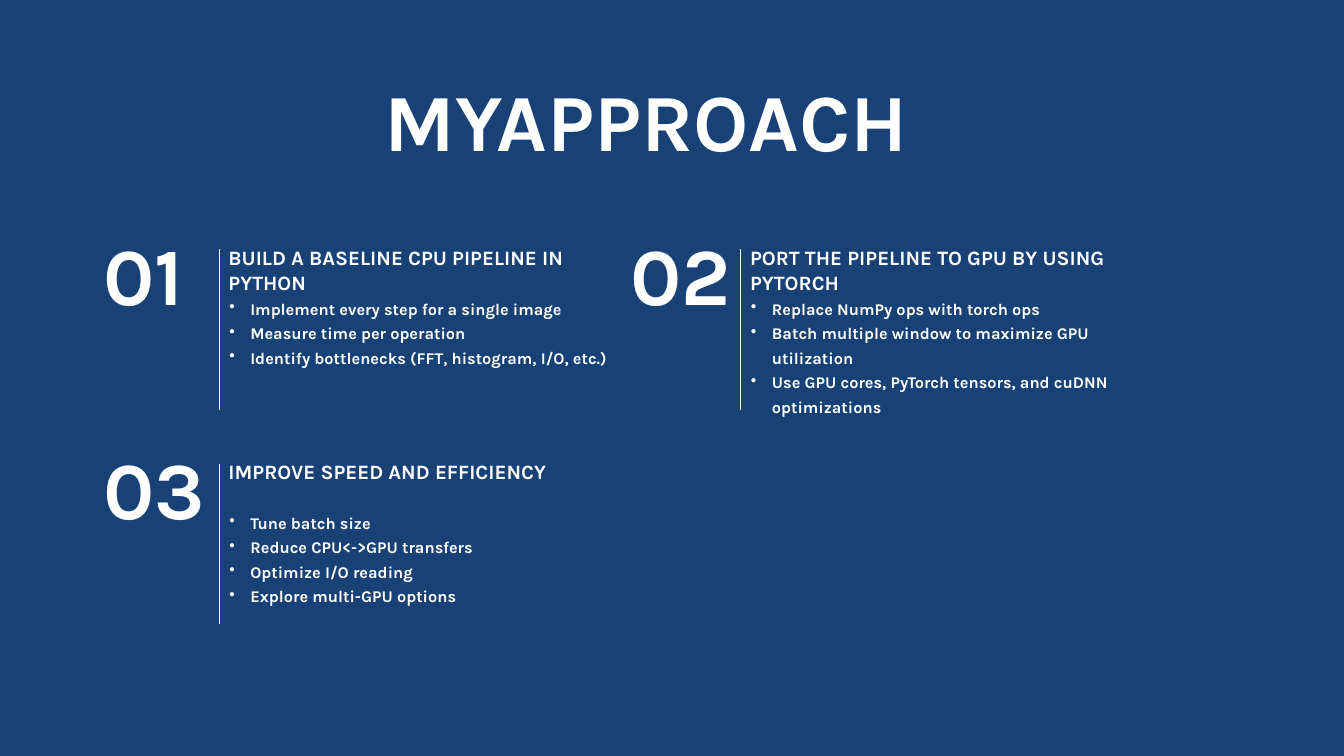
from lxml.etree import SubElement
from pptx import Presentation
from pptx.dml.color import RGBColor
from pptx.enum.shapes import MSO_CONNECTOR
from pptx.enum.text import MSO_ANCHOR, MSO_AUTO_SIZE, PP_ALIGN
from pptx.oxml.ns import qn
from pptx.util import Inches, Pt

TITLE = "MYAPPROACH"
# column, row, heading width, bullets width and height, heading, bullets
STEPS = [
    (0, 0, 4.24, 5.43, 0.88, "BUILD A BASELINE CPU PIPELINE IN PYTHON", [
        "Implement every step for a single image",
        "Measure time per operation",
        "Identify bottlenecks (FFT, histogram, I/O, etc.)",
    ]),
    (1, 0, 4.53, 5.16, 1.45, "PORT THE PIPELINE TO GPU BY USING PYTORCH", [
        "Replace NumPy ops with torch ops",
        "Batch multiple window to maximize GPU utilization",
        "Use GPU cores, PyTorch tensors, and cuDNN optimizations",
    ]),
    (0, 1, 4.24, 4.32, 1.16, "IMPROVE SPEED AND EFFICIENCY", [
        "Tune batch size",
        "Reduce CPU<->GPU transfers",
        "Optimize I/O reading",
        "Explore multi-GPU options",
    ]),
]
COLORS = {"background": "184175", "ink": "FFFFFF"}
FONT = "Karla"
DISPLAY_SIZE, HEADING_SIZE, BULLET_SIZE = 69.5, 17.5, 14
RULE_X = (2.61, 8.82)
NUMBER_X = (1.23, 7.5)
RULE_TOP, RULE_HEIGHT, ROW_PITCH = 2.97, 1.91, 2.55


def rgb(name):
    return RGBColor.from_string(COLORS[name])


def write(box, text, size, align=PP_ALIGN.LEFT):
    frame = box.text_frame
    frame.word_wrap = True
    frame.auto_size = MSO_AUTO_SIZE.NONE
    frame.vertical_anchor = MSO_ANCHOR.TOP
    frame.margin_left = frame.margin_right = frame.margin_bottom = 0
    frame.margin_top = Inches(0.01)
    frame.text = text
    for paragraph in frame.paragraphs:
        paragraph.alignment = align
        paragraph.space_before = Pt(0)
        font = paragraph.runs[0].font
        font.name, font.size, font.bold = FONT, Pt(size), True
        font.color.rgb = rgb("ink")
    frame.paragraphs[0].space_before = Pt(0.9)
    return frame


def add_text(slide, left, top, width, height, text, size):
    box = slide.shapes.add_textbox(
        Inches(left), Inches(top), Inches(width), Inches(height))
    return write(box, text, size)


def add_bullets(slide, left, top, width, height, bullets):
    frame = add_text(slide, left, top, width, height, "\n".join(bullets), BULLET_SIZE)
    frame.margin_right = Inches(0.4)
    for paragraph in frame.paragraphs:
        paragraph.line_spacing = Pt(21)
        properties = paragraph._p.get_or_add_pPr()
        properties.set("marL", str(Inches(0.26)))
        properties.set("indent", str(Inches(-0.25)))
        SubElement(properties, qn("a:buChar")).set("char", "•")


def add_rule(slide, x, top):
    rule = slide.shapes.add_connector(
        MSO_CONNECTOR.STRAIGHT,
        Inches(x), Inches(top), Inches(x), Inches(top + RULE_HEIGHT))
    rule.line.color.rgb = rgb("ink")
    rule.line.width = Pt(1)
    SubElement(rule._element.spPr, qn("a:effectLst"))


def add_step(slide, number, step):
    column, row, heading_width, width, height, heading, bullets = step
    rule_x = RULE_X[column]
    rule_top = RULE_TOP + row * ROW_PITCH
    text_x = rule_x + 0.11
    add_text(slide, text_x, rule_top - 0.06, heading_width, 0.6, heading, HEADING_SIZE)
    add_bullets(slide, text_x, rule_top + 0.52, width, height, bullets)
    add_rule(slide, rule_x, rule_top)
    add_text(slide, NUMBER_X[column], rule_top - 0.31, 1.32, 1.18,
             f"{number:02d}", DISPLAY_SIZE)


def main():
    deck = Presentation()
    deck.slide_width, deck.slide_height = Inches(16), Inches(9)
    slide = deck.slides.add_slide(deck.slide_layouts.get_by_name("Title Only"))
    slide.background.fill.solid()
    slide.background.fill.fore_color.rgb = rgb("background")

    title = slide.shapes.title
    title.left, title.top = Inches(4.2), Inches(0.83)
    title.width, title.height = Inches(6.99), Inches(1.18)
    write(title, TITLE, DISPLAY_SIZE, PP_ALIGN.CENTER)

    for number, step in enumerate(STEPS, start=1):
        add_step(slide, number, step)
    deck.save("out.pptx")


if __name__ == "__main__":
    main()
